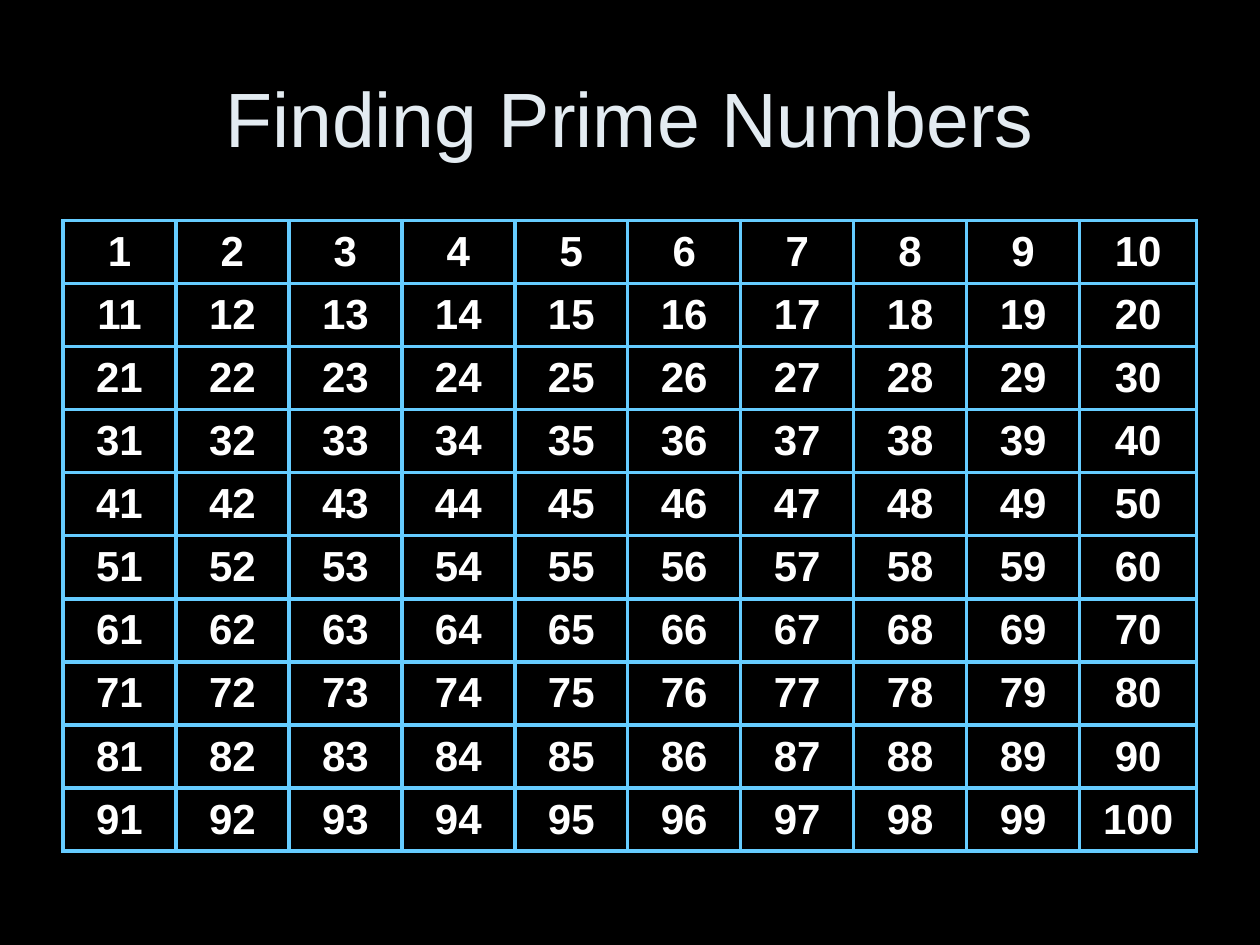
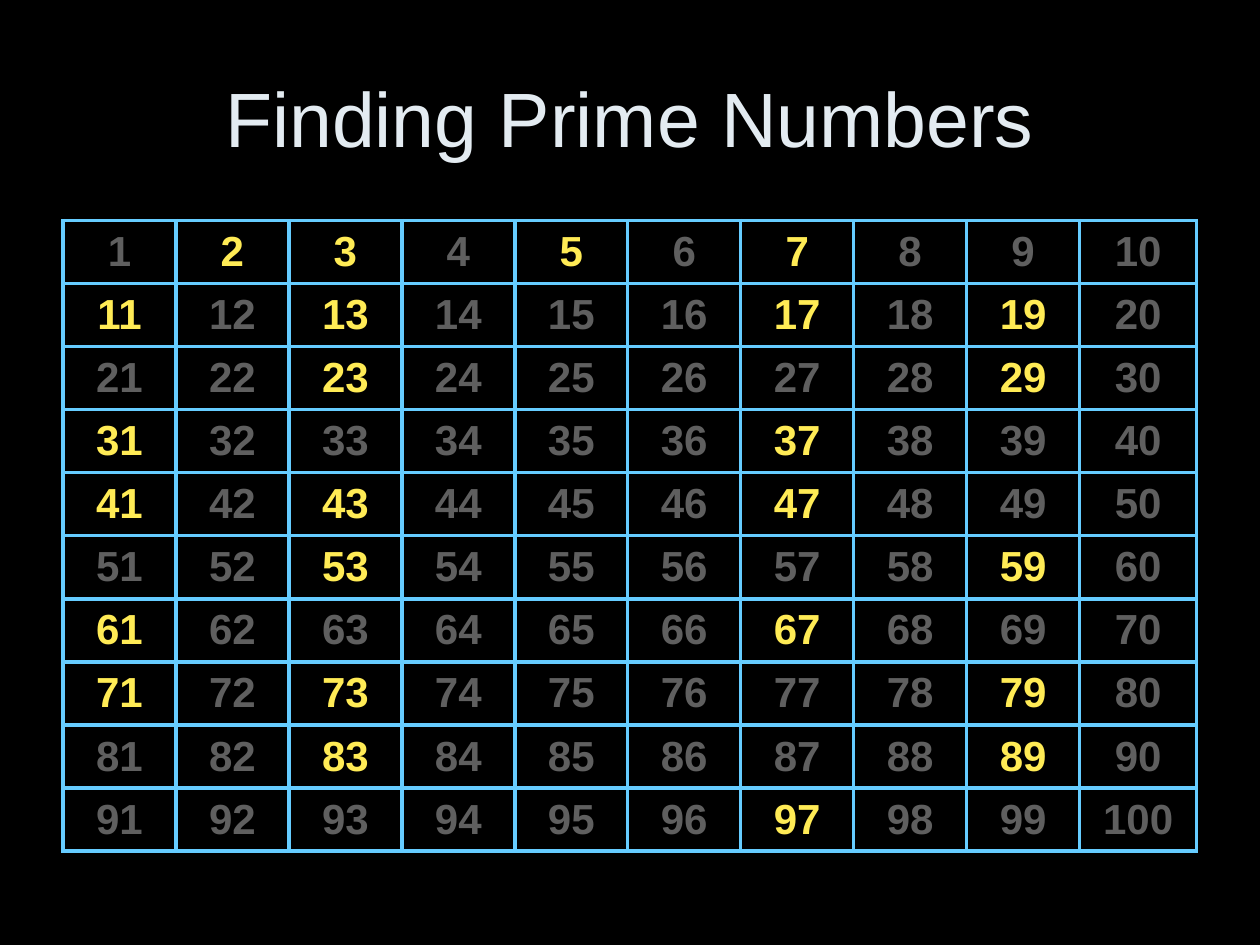
import pptx
import pptx.util
import pptx.dml.color
import pptx.enum.text
import pptx.oxml.ns
import lxml.etree

TITLE = "Finding Prime Numbers"
SIDE = 10
COLORS = {"back": "000000", "title": "E3EBF1", "line": "66CCFF",
          "plain": "FFFFFF", "prime": "FFEB55", "other": "5F5F5F"}
# One entry per slide: whether primes stand out, and the hanging indent
VIEWS = [{"mark": False, "hang": 0.38}, {"mark": True, "hang": 0}]

FONT = "Arial"
WIDE, HIGH = 10, 7.5
EDGE = WIDE / 20
SPAN = WIDE - 2 * EDGE
TITLE_TOP, TITLE_HIGH = 0.3, 1.25
GRID_TOP, GRID_HIGH = 1.75, 4.95
LAST_COL = 0.93
LINE = pptx.util.Pt(2.25)
inch = pptx.util.Inches


def color(name):
    return pptx.dml.color.RGBColor.from_string(COLORS[name])


def is_prime(num):
    return num > 1 and all(num % div for div in range(2, int(num ** 0.5) + 1))


def style(para, size, name, bold=False):
    para.alignment = pptx.enum.text.PP_ALIGN.CENTER
    for run in para.runs:
        font = run.font
        font.name, font.size, font.bold = FONT, pptx.util.Pt(size), bold
        font.color.rgb = color(name)


def add_title(slide):
    box = slide.shapes.add_textbox(inch(EDGE), inch(TITLE_TOP),
                                   inch(SPAN), inch(TITLE_HIGH))
    frame = box.text_frame
    frame.word_wrap = True
    frame.vertical_anchor = pptx.enum.text.MSO_ANCHOR.MIDDLE
    frame.text = TITLE
    style(frame.paragraphs[0], 44, "title")


def add_lines(cell):
    """Draw the four borders of a cell."""
    props = cell._tc.get_or_add_tcPr()
    tag = pptx.oxml.ns.qn
    for side in "LRTB":
        line = lxml.etree.SubElement(props, tag("a:ln" + side), w=str(LINE))
        fill = lxml.etree.SubElement(line, tag("a:solidFill"))
        lxml.etree.SubElement(fill, tag("a:srgbClr"), val=COLORS["line"])


def fill_cell(cell, num, mark, hang):
    cell.vertical_anchor = pptx.enum.text.MSO_ANCHOR.MIDDLE
    add_lines(cell)
    cell.fill.background()
    cell.text_frame.text = str(num)
    para = cell.text_frame.paragraphs[0]
    if hang:
        props = para._p.get_or_add_pPr()
        props.set("marL", str(inch(hang)))
        props.set("indent", str(inch(-hang)))
    name = "plain" if not mark else "prime" if is_prime(num) else "other"
    style(para, 24, name, bold=True)


def add_grid(slide, mark, hang):
    """Add the table of numbers, counted along the rows."""
    table = slide.shapes.add_table(SIDE, SIDE, inch(EDGE), inch(GRID_TOP),
                                   inch(SPAN), inch(GRID_HIGH)).table
    table.first_row = table.horz_banding = False
    for col in table.columns:
        col.width = inch((SPAN - LAST_COL) / (SIDE - 1))
    table.columns[SIDE - 1].width = inch(LAST_COL)
    for row in table.rows:
        row.height = inch(GRID_HIGH / SIDE)
    for num, cell in enumerate(table.iter_cells(), 1):
        fill_cell(cell, num, mark, hang)


def main():
    deck = pptx.Presentation()
    deck.slide_width, deck.slide_height = inch(WIDE), inch(HIGH)
    for view in VIEWS:
        slide = deck.slides.add_slide(deck.slide_layouts[6])
        fill = slide.background.fill
        fill.solid()
        fill.fore_color.rgb = color("back")
        add_title(slide)
        add_grid(slide, **view)
    deck.save("out.pptx")


if __name__ == "__main__":
    main()
